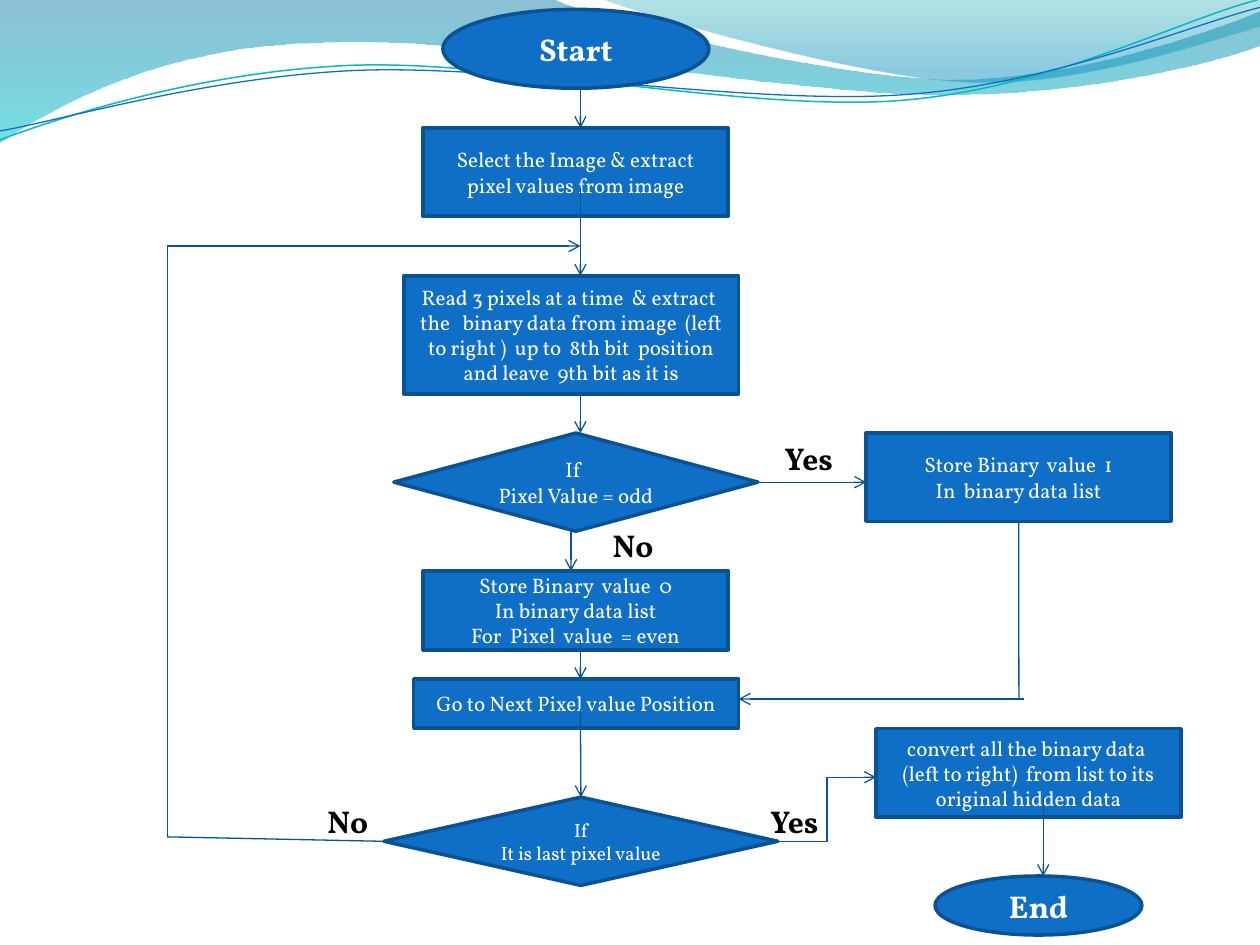
from dataclasses import dataclass
from typing import Optional

from lxml.etree import SubElement
from pptx import Presentation
from pptx.dml.color import RGBColor
from pptx.enum.shapes import MSO_CONNECTOR, MSO_SHAPE
from pptx.enum.text import MSO_ANCHOR, MSO_AUTO_SIZE, PP_ALIGN
from pptx.oxml.ns import qn
from pptx.util import Cm, Pt

COLORS = {
    "node": "0F6FC6", "border": "0B5292", "arrow": "095295",
    "node_text": "FFFFFF", "label": "000000", "teal_line": "0AB8BF",
}
FONT = "Vollkorn"
NODE_FRAME = {"word_wrap": True, "vertical_anchor": MSO_ANCHOR.MIDDLE}
LABEL_FRAME = {"word_wrap": False, "auto_size": MSO_AUTO_SIZE.SHAPE_TO_FIT_TEXT}
TOP, LEFT, BOTTOM, RIGHT = range(4)
RECT, DECISION, OVAL = MSO_SHAPE.RECTANGLE, MSO_SHAPE.FLOWCHART_DECISION, MSO_SHAPE.OVAL


@dataclass
class Node:
    kind: MSO_SHAPE
    box: tuple  # left, top, width, height in cm
    text: str
    size: int = 12
    bold: bool = False


@dataclass
class Label:
    text: str
    box: tuple


@dataclass
class Flow:
    start: tuple
    end: tuple
    arrow: bool = True
    begin: Optional[tuple] = None  # node key, side
    finish: Optional[tuple] = None
    kind: MSO_CONNECTOR = MSO_CONNECTOR.STRAIGHT


@dataclass
class Wave:
    """An outline in cm: a pair is a line end, six numbers are a cubic curve."""
    start: tuple
    segments: list
    stops: tuple = ()  # position, colour, opacity in percent
    line: str = ""
    width: float = 0.75


WAVES = [
    Wave((0, 0), [
        (11.18, 0), (12.09, 0.43, 16.87, 1.6, 19.25, 1.6),
        (21.67, 1.6, 24.33, 0.66, 25.4, 0.23), (25.4, 0.91),
        (24.97, 1.12, 22.1, 1.93, 18.95, 1.91),
        (15.8, 1.91, 9.7, 0.71, 6.53, 0.86),
        (3.28, 0.91, 1.17, 2.11, 0, 2.87),
    ], stops=((0, "0074A1", 45), (1, "00C6CF", 55))),
    Wave((12.17, 0), [
        (12.93, 0.3, 17.32, 1.57, 19.53, 1.65),
        (21.74, 1.75, 24.41, 0.81, 25.4, 0.53), (25.4, 0),
    ], stops=((0, "00A1A9", 30), (0.8, "008BBF", 45))),
    Wave((0, 2.82), [
        (1.22, 2.36, 4.01, 1.45, 7.04, 1.32),
        (10.03, 1.19, 15.06, 2.26, 18.11, 2.03),
        (21.16, 1.8, 23.83, 0.38, 25.35, 0),
    ], line="teal_line", width=0.85),
    Wave((0, 2.64), [
        (1.19, 2.44, 4.17, 1.55, 7.19, 1.42),
        (10.24, 1.3, 15.16, 2.13, 18.21, 1.91),
        (21.23, 1.7, 23.9, 0.53, 25.4, 0.15),
    ], line="node"),
]

NODES = {
    "start": Node(OVAL, (8.93, 0.19, 5.36, 1.59), "Start", 18, True),
    "select": Node(RECT, (8.53, 2.58, 6.15, 1.78),
                   "Select the Image & extract pixel values from image"),
    "read": Node(RECT, (8.14, 5.56, 6.75, 2.38),
                 "Read 3 pixels at a time  & extract  the   binary data from image  "
                 "(left to right )  up to  8th bit  position and leave  9th bit as it is"),
    "odd": Node(DECISION, (7.94, 8.73, 7.34, 1.98), "If \nPixel Value = odd"),
    "store_one": Node(RECT, (17.46, 8.73, 6.15, 1.78),
                      "Store Binary  value  1\nIn  binary data list"),
    "store_zero": Node(RECT, (8.53, 11.51, 6.15, 1.59),
                       "Store Binary  value  0\nIn binary data list\nFor  Pixel  value  = even"),
    "next": Node(RECT, (8.34, 13.69, 6.55, 0.99), "Go to Next Pixel value Position"),
    "last": Node(DECISION, (7.74, 16.07, 7.94, 1.78), "If\nIt is last pixel value", 11),
    "convert": Node(RECT, (17.66, 14.69, 6.15, 1.78),
                    "convert all the binary data \n"
                    "(left to right)  from list to its original hidden data"),
    "end": Node(OVAL, (18.85, 17.66, 4.17, 1.19), "End", 18, True),
}

LABELS = [
    Label("Yes", (15.57, 8.73, 1.5, 1.02)),
    Label("No", (12.1, 10.48, 1.37, 1.02)),
    Label("No", (6.35, 16.04, 1.37, 1.02)),
    Label("Yes", (15.28, 16.04, 1.5, 1.02)),
]

SPINE, LOOP = 11.7, 3.37
FLOWS = [
    Flow((SPINE, 1.78), (SPINE, 2.58)),
    Flow((SPINE, 7.94), (SPINE, 8.73)),
    Flow((SPINE, 14.29), (SPINE, 16.07), finish=("last", TOP)),
    Flow((11.51, 10.71), (11.51, 11.51)),
    Flow((SPINE, 3.76), (SPINE, 5.56)),
    Flow((SPINE, 12.9), (SPINE, 13.69)),
    Flow((15.08, 9.72), (17.46, 9.72)),
    Flow((7.74, 16.96), (LOOP, 16.87), arrow=False, begin=("last", LEFT)),
    Flow((LOOP, 16.87), (LOOP, 4.96), arrow=False),
    Flow((LOOP, 4.96), (SPINE, 4.96)),
    Flow((20.54, 10.51), (20.54, 14.09), arrow=False, begin=("store_one", BOTTOM)),
    Flow((20.64, 14.09), (14.89, 14.09)),
    Flow((21.03, 16.07), (21.03, 17.66)),
    Flow((15.68, 16.96), (17.66, 15.67), begin=("last", RIGHT), kind=MSO_CONNECTOR.ELBOW),
]


def rgb(name: str) -> RGBColor:
    return RGBColor.from_string(COLORS[name])


def set_all(target, values: dict) -> None:
    for attribute, value in values.items():
        setattr(target, attribute, value)


def outline(line, color: str, width: float) -> None:
    line.color.rgb = rgb(color)
    line.width = Pt(width)


def write(frame, text: str, frame_format: dict, font_format: dict, color: str, align) -> None:
    set_all(frame, frame_format)
    frame.text = text
    for paragraph in frame.paragraphs:
        paragraph.alignment = align
        set_all(paragraph.runs[0].font, {"name": FONT, **font_format})
        paragraph.runs[0].font.color.rgb = rgb(color)


def bend(shape, segments: list) -> None:
    """Join the three line ends of each curved segment into one cubic curve."""
    line_ends = iter(list(shape._element.iter(qn("a:lnTo"))))
    for segment in segments:
        steps = [next(line_ends) for _ in range(len(segment) // 2)]
        if len(steps) == 3:
            curve, *others = steps
            curve.tag = qn("a:cubicBezTo")
            for other in others:
                curve.append(other[0])
                other.getparent().remove(other)


def draw_wave(shapes, wave: Wave) -> None:
    builder = shapes.build_freeform(*map(Cm, wave.start))
    points = [(Cm(x), Cm(y)) for segment in wave.segments
              for x, y in zip(segment[::2], segment[1::2])]
    builder.add_line_segments(points, close=bool(wave.stops))
    shape = builder.convert_to_shape()
    bend(shape, wave.segments)
    shape.shadow.inherit = False
    if not wave.stops:
        shape.fill.background()
        outline(shape.line, wave.line, wave.width)
        return
    shape.line.fill.background()
    shape.fill.gradient()
    shape.fill.gradient_angle = 270
    for stop, (position, color, _) in zip(shape.fill.gradient_stops, wave.stops):
        stop.position = position
        stop.color.rgb = RGBColor.from_string(color)
    tints = shape._element.spPr.iter(qn("a:srgbClr"))
    for tint, (_, _, opacity) in zip(tints, wave.stops):
        SubElement(tint, qn("a:alpha"), val=str(opacity * 1000))


def draw_node(shapes, node: Node):
    shape = shapes.add_shape(node.kind, *map(Cm, node.box))
    shape.shadow.inherit = False
    shape.fill.solid()
    shape.fill.fore_color.rgb = rgb("node")
    outline(shape.line, "border", 2)
    write(shape.text_frame, node.text, NODE_FRAME,
          {"size": Pt(node.size), "bold": node.bold}, "node_text", PP_ALIGN.CENTER)
    return shape


def draw_label(shapes, label: Label) -> None:
    box = shapes.add_textbox(*map(Cm, label.box))
    write(box.text_frame, label.text, LABEL_FRAME,
          {"size": Pt(18), "bold": True}, "label", PP_ALIGN.LEFT)


def draw_flow(shapes, flow: Flow, drawn: dict) -> None:
    connector = shapes.add_connector(flow.kind, *map(Cm, flow.start + flow.end))
    outline(connector.line, "arrow", 0.75)
    properties = connector._element.spPr
    if flow.arrow:
        SubElement(properties.find(qn("a:ln")), qn("a:tailEnd"), type="arrow")
    SubElement(properties, qn("a:effectLst"))
    if flow.begin:
        key, side = flow.begin
        connector.begin_connect(drawn[key], side)
    if flow.finish:
        key, side = flow.finish
        connector.end_connect(drawn[key], side)


def main() -> None:
    deck = Presentation()
    set_all(deck, {"slide_width": Cm(25.4), "slide_height": Cm(19.05)})
    shapes = deck.slides.add_slide(deck.slide_layouts[6]).shapes
    for wave in WAVES:
        draw_wave(shapes, wave)
    drawn = {key: draw_node(shapes, node) for key, node in NODES.items()}
    for flow in FLOWS:
        draw_flow(shapes, flow, drawn)
    for label in LABELS:
        draw_label(shapes, label)
    deck.save("out.pptx")


if __name__ == "__main__":
    main()
